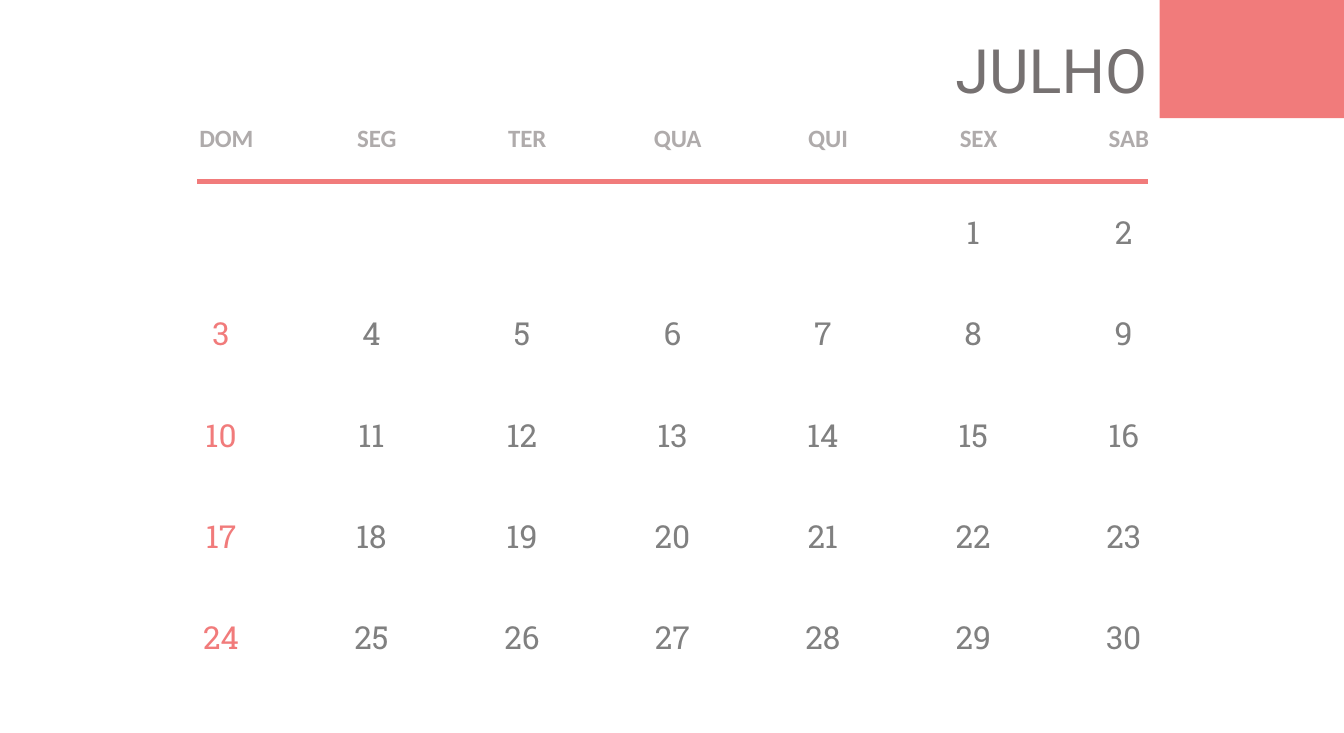
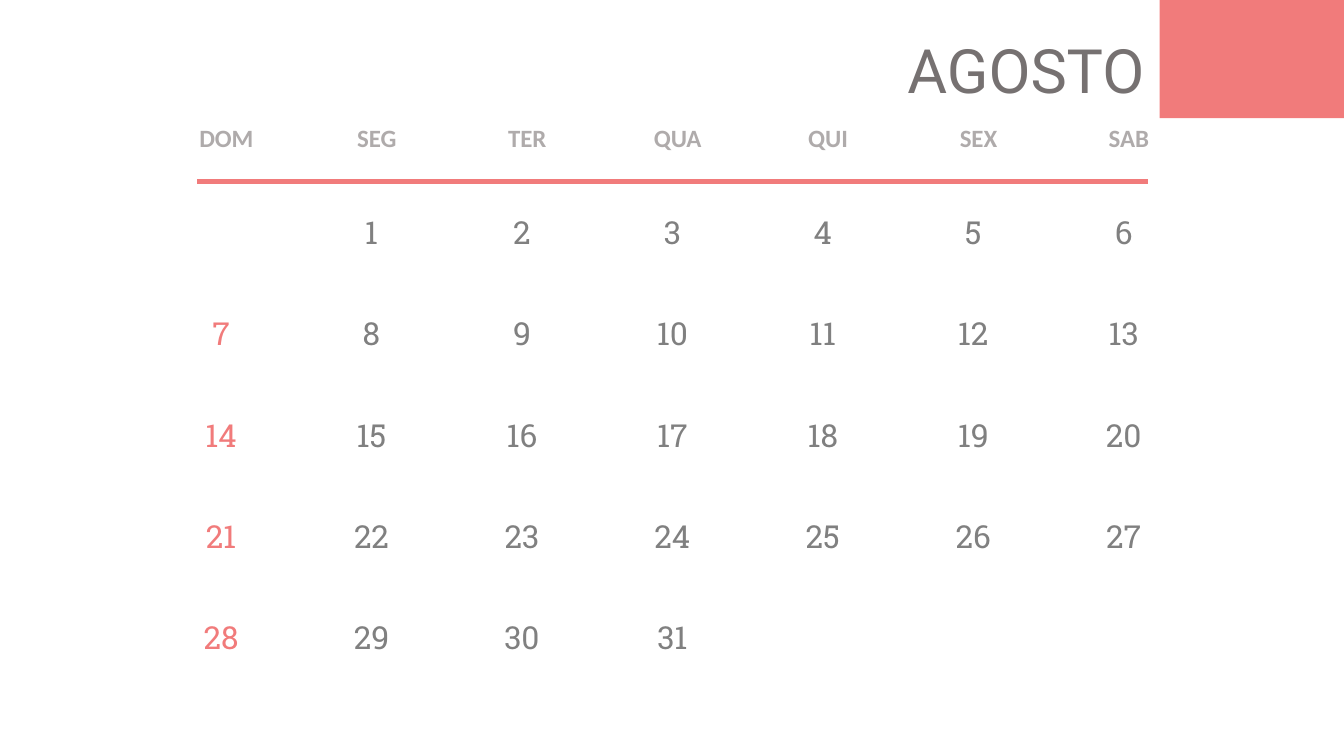
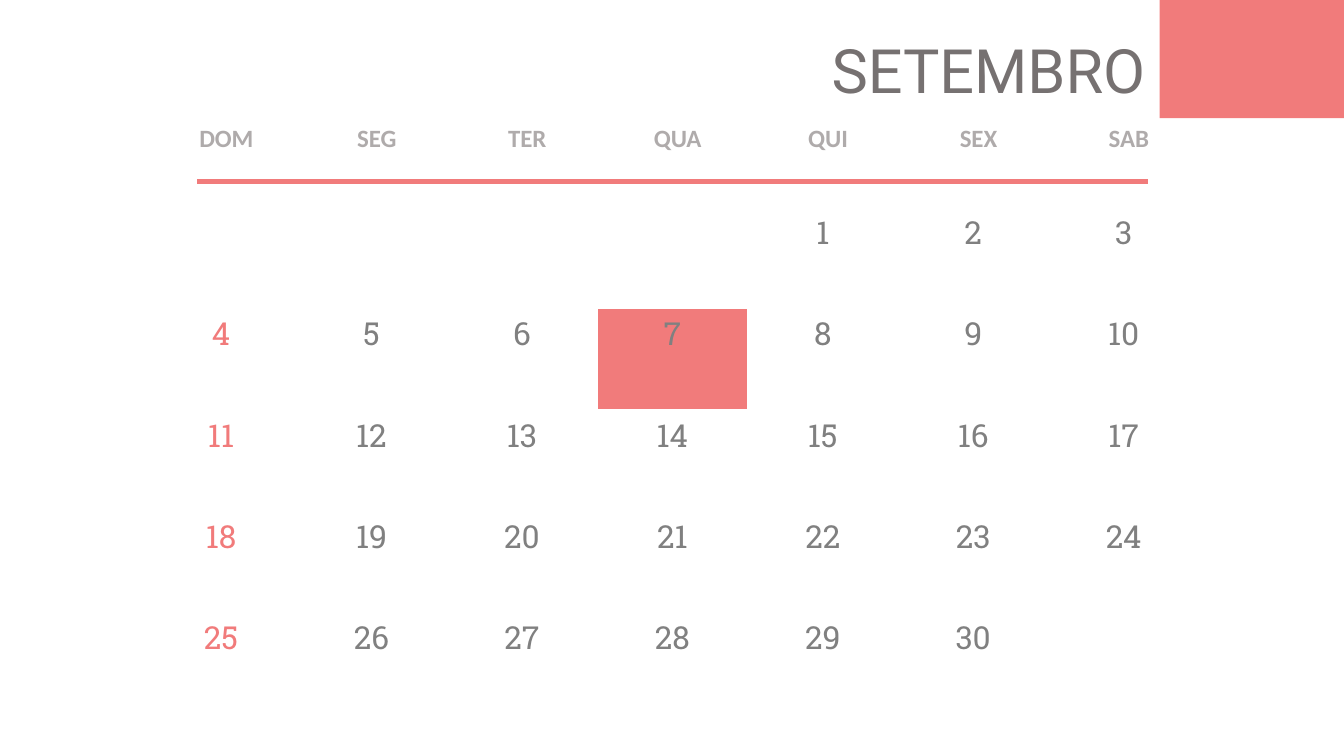
from lxml import etree
from pptx import Presentation
from pptx.dml.color import RGBColor
from pptx.enum import shapes, text
from pptx.oxml.ns import qn
from pptx.util import Pt

CORAL = RGBColor(0xF1, 0x7B, 0x7B)
TITLE_GREY = RGBColor(0x76, 0x71, 0x71)
HEADER_GREY = RGBColor(0xAF, 0xAB, 0xAB)
DAY_GREY = RGBColor(0x80, 0x80, 0x80)
WHITE = RGBColor(0xFF, 0xFF, 0xFF)

TITLE_FONT = {"name": "Roboto", "size": Pt(54), "bold": False}
HEADER_FONT = {"name": "Calibri", "size": Pt(22), "bold": True}
DAY_FONT = {"name": "Roboto Slab", "size": Pt(28), "bold": False}
HEADER_MARGINS = {"margin_left": Pt(9.4), "margin_top": Pt(5),
                  "margin_right": Pt(0), "margin_bottom": Pt(5)}
DAY_MARGINS = {"margin_left": Pt(10), "margin_top": Pt(4.3),
               "margin_right": Pt(10), "margin_bottom": Pt(4.3)}

SLIDE_WIDTH, SLIDE_HEIGHT = 1188, 648
BAND_LEFT, BAND_HEIGHT = 1025, 104.4
TITLE_RIGHT, TITLE_TOP, TITLE_HEIGHT = 1024, 25.2, 72.7
TABLE_LEFT, TABLE_TOP = 128.9, 104.4
COLUMN_WIDTH, HEADER_HEIGHT, WEEK_HEIGHT = 133, 78.5, 89.4
RULE_LEFT, RULE_RIGHT, RULE_TOP = 174.2, 1014.5, 160.6

WEEKDAYS = ("DOM", "SEG", "TER", "QUA", "QUI", "SEX", "SAB")
WEEKS = 5

# Name, title width, column of day 1, last day shown, highlighted days
MONTHS = (
    ("JULHO", 186.5, 5, 30, ()),
    ("AGOSTO", 229, 1, 31, ()),
    ("SETEMBRO", 296, 4, 30, (7,)),
)


def apply(target, values):
    for name, value in values.items():
        setattr(target, name, value)


class CalendarDeck:
    """Holds the presentation, its style and the slide being built."""

    def __init__(self):
        self.presentation = Presentation()
        apply(self.presentation, {"slide_width": Pt(SLIDE_WIDTH),
                                  "slide_height": Pt(SLIDE_HEIGHT)})
        self.slide = None

    def new_slide(self):
        blank = self.presentation.slide_layouts[6]
        self.slide = self.presentation.slides.add_slide(blank)

    def add_text(self, paragraph, content, font, color):
        run = paragraph.add_run()
        run.text = content
        apply(run.font, font)
        run.font.color.rgb = color

    def title(self, name, width):
        box = self.slide.shapes.add_textbox(
            Pt(TITLE_RIGHT - width), Pt(TITLE_TOP), Pt(width), Pt(TITLE_HEIGHT))
        apply(box.text_frame, {"word_wrap": False,
                               "auto_size": text.MSO_AUTO_SIZE.SHAPE_TO_FIT_TEXT})
        self.add_text(box.text_frame.paragraphs[0], name, TITLE_FONT, TITLE_GREY)

    def rule(self):
        line = self.slide.shapes.add_connector(
            shapes.MSO_CONNECTOR.STRAIGHT,
            Pt(RULE_LEFT), Pt(RULE_TOP), Pt(RULE_RIGHT), Pt(RULE_TOP))
        line.line.color.rgb = CORAL
        line.line.width = Pt(4.5)
        etree.SubElement(line._element.spPr, qn("a:effectLst"))

    def corner_band(self):
        band = self.slide.shapes.add_shape(
            shapes.MSO_SHAPE.RECTANGLE, Pt(BAND_LEFT), Pt(0),
            Pt(SLIDE_WIDTH - BAND_LEFT), Pt(BAND_HEIGHT))
        band.shadow.inherit = False
        band.fill.solid()
        band.fill.fore_color.rgb = CORAL
        band.line.fill.background()

    def cell_borders(self, cell):
        """Put white one-point lines ahead of the fill, as the schema requires."""
        properties = cell._tc.get_or_add_tcPr()
        for position, side in enumerate(("lnL", "lnR", "lnT", "lnB")):
            border = etree.Element(qn(f"a:{side}"), w=str(Pt(1)))
            fill = etree.SubElement(border, qn("a:solidFill"))
            etree.SubElement(fill, qn("a:srgbClr"), val=str(WHITE))
            properties.insert(position, border)

    def cell(self, cell, content, font, color, margins, fill=None):
        apply(cell, margins)
        if fill is None:
            cell.fill.background()
        else:
            cell.fill.solid()
            cell.fill.fore_color.rgb = fill
        self.cell_borders(cell)
        paragraph = cell.text_frame.paragraphs[0]
        paragraph.alignment = text.PP_ALIGN.CENTER
        if content:
            self.add_text(paragraph, content, font, color)

    def month_table(self, first_column, last_day, highlights):
        columns = len(WEEKDAYS)
        table = self.slide.shapes.add_table(
            WEEKS + 1, columns, Pt(TABLE_LEFT), Pt(TABLE_TOP),
            Pt(columns * COLUMN_WIDTH),
            Pt(HEADER_HEIGHT + WEEKS * WEEK_HEIGHT)).table
        apply(table, {"first_row": False, "horz_banding": False})
        for row_index, row in enumerate(table.rows):
            row.height = Pt(WEEK_HEIGHT if row_index else HEADER_HEIGHT)
        for column, weekday in enumerate(WEEKDAYS):
            table.columns[column].width = Pt(COLUMN_WIDTH)
            self.cell(table.cell(0, column), weekday,
                      HEADER_FONT, HEADER_GREY, HEADER_MARGINS)
            for week in range(WEEKS):
                day = week * columns + column - first_column + 1
                self.cell(table.cell(week + 1, column),
                          str(day) if 1 <= day <= last_day else "",
                          DAY_FONT, DAY_GREY if column else CORAL, DAY_MARGINS,
                          CORAL if day in highlights else None)

    def month_slide(self, name, title_width, first_column, last_day, highlights):
        self.new_slide()
        self.month_table(first_column, last_day, highlights)
        self.title(name, title_width)
        self.rule()
        self.corner_band()


def main():
    deck = CalendarDeck()
    for month in MONTHS:
        deck.month_slide(*month)
    deck.presentation.save("out.pptx")


if __name__ == "__main__":
    main()
